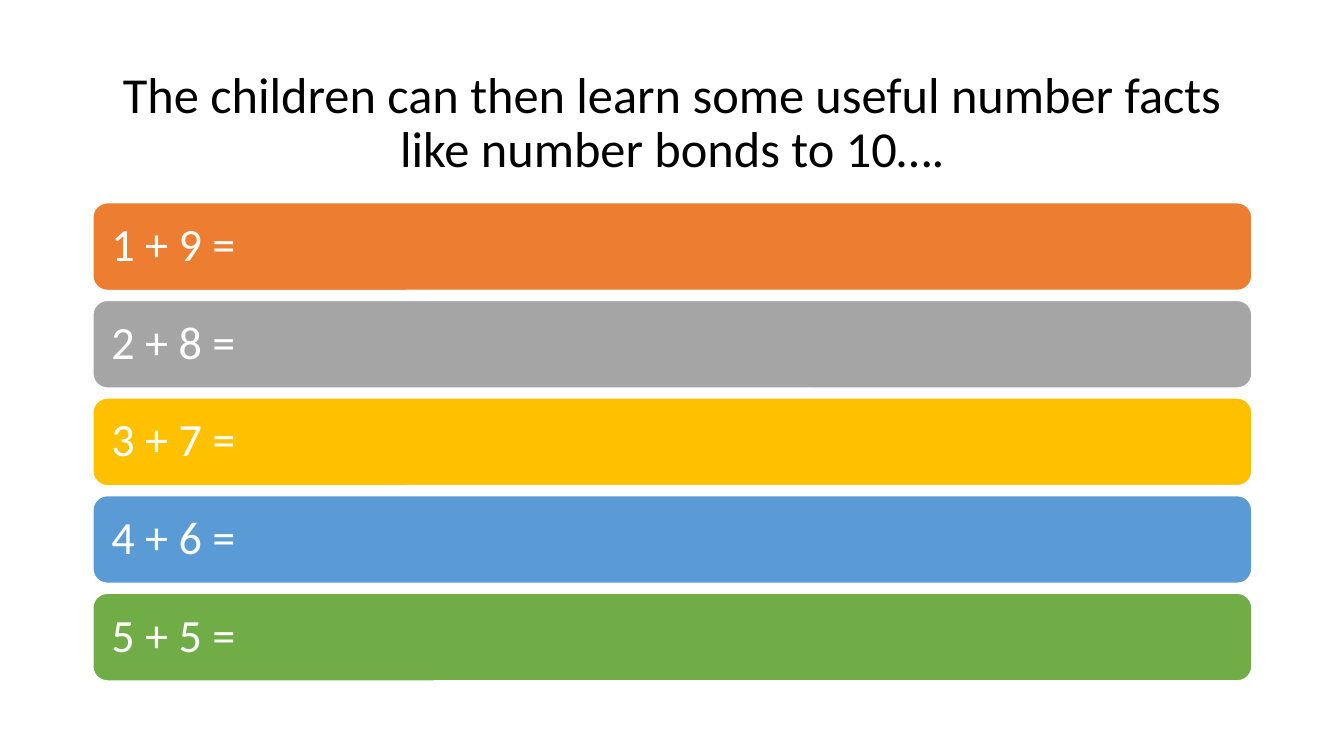
import pptx
import pptx.dml.color
import pptx.enum.shapes
import pptx.enum.text
import pptx.util

Cm = pptx.util.Cm
Pt = pptx.util.Pt
Align = pptx.enum.text.PP_ALIGN


def colour(value):
    return pptx.dml.color.RGBColor.from_string(value)


class NumberFactsSlide:
    """Holds the style and the current slide, and adds its elements."""

    font_name = "Calibri"
    left, width = Cm(2.34), Cm(29.21)

    def __init__(self, deck):
        self.page = deck.slides.add_slide(deck.slide_layouts[5])

    def label(self, shape, text, size, ink, align, inset):
        frame = shape.text_frame
        frame_format = {
            "word_wrap": True,
            "auto_size": pptx.enum.text.MSO_AUTO_SIZE.NONE,
            "vertical_anchor": pptx.enum.text.MSO_ANCHOR.MIDDLE,
            "margin_left": inset,
            "margin_right": inset,
        }
        for name, value in frame_format.items():
            setattr(frame, name, value)
        para = frame.paragraphs[0]
        para.alignment = align
        para.line_spacing = 0.9
        span = para.add_run()
        span.text = text
        for name, value in {"name": self.font_name, "size": Pt(size)}.items():
            setattr(span.font, name, value)
        span.font.color.rgb = colour(ink)

    def title(self, text, top, height):
        box = self.page.shapes.title
        place = {"left": self.left, "top": top, "width": self.width, "height": height}
        for name, value in place.items():
            setattr(box, name, value)
        self.label(box, text, 36, "000000", Align.CENTER, Cm(0.25))

    def bar(self, text, top, height, fill):
        bar = self.page.shapes.add_shape(
            pptx.enum.shapes.MSO_SHAPE.ROUNDED_RECTANGLE,
            self.left, top, self.width, height)
        bar.shadow.inherit = False
        bar.fill.solid()
        bar.fill.fore_color.rgb = colour(fill)
        bar.line.color.rgb = colour("FFFFFF")
        bar.line.width = Pt(1)
        self.label(bar, text, 33, "FFFFFF", Align.LEFT, Cm(0.36))


def main():
    deck = pptx.Presentation()
    deck.slide_width, deck.slide_height = Cm(33.87), Cm(19.05)
    slide = NumberFactsSlide(deck)
    slide.title(
        "The children can then learn some useful number facts like number bonds to 10….",
        Cm(1.55), Cm(3.15))
    fills = ["ED7D31", "A5A5A5", "FFC000", "5B9BD5", "70AD47"]
    for index, fill in enumerate(fills):
        first = index + 1
        slide.bar(f"{first} + {10 - first} =", Cm(5.11 + 2.46 * index), Cm(2.21), fill)
    deck.save("out.pptx")


if __name__ == "__main__":
    main()
